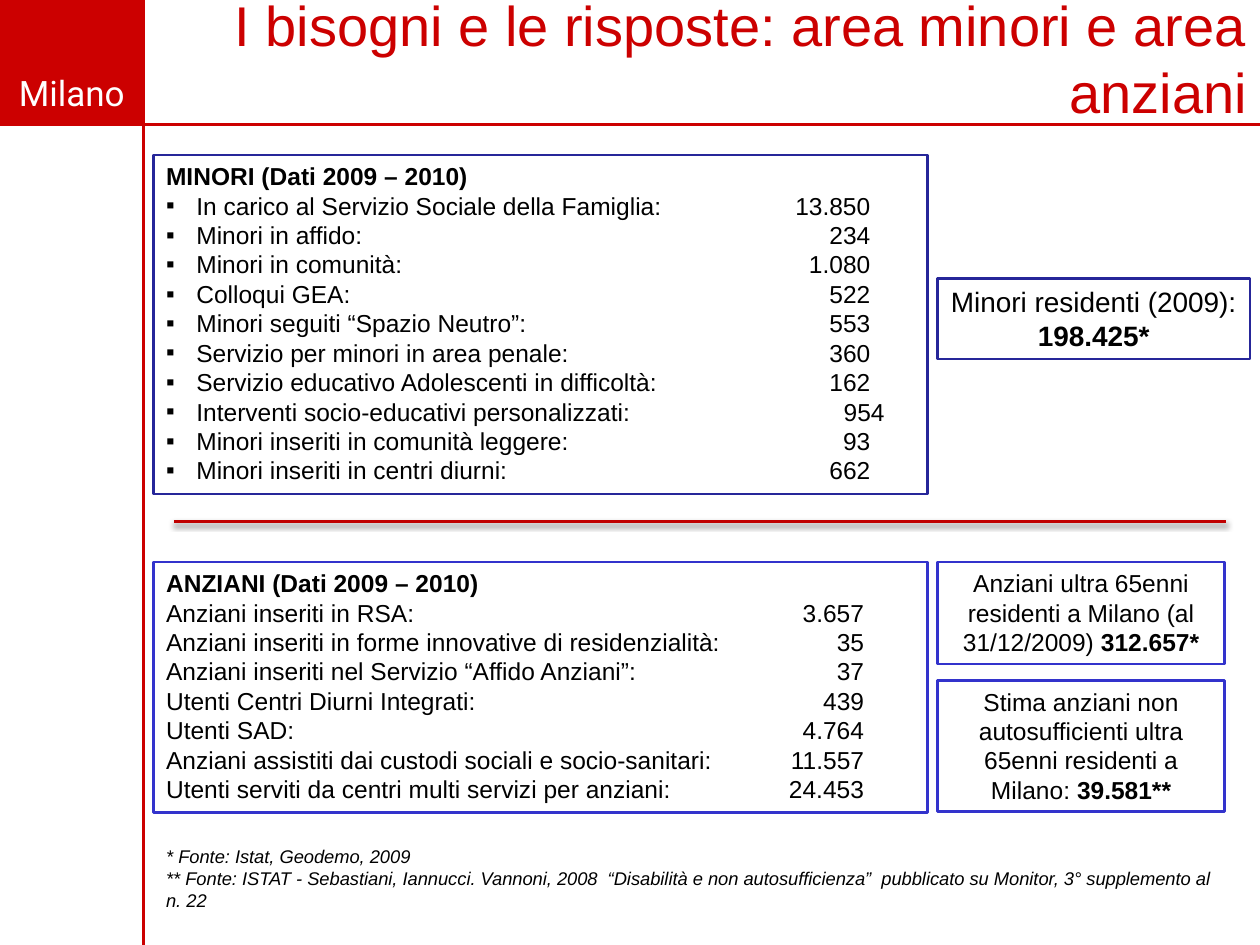
from pptx import Presentation
from pptx.dml.color import RGBColor
from pptx.enum.shapes import MSO_CONNECTOR, MSO_SHAPE
from pptx.enum.text import MSO_ANCHOR, MSO_AUTO_SIZE, PP_ALIGN
from pptx.oxml import parse_xml
from pptx.oxml.ns import nsdecls
from pptx.util import Inches, Pt

RECTANGLE = MSO_SHAPE.RECTANGLE
STRAIGHT = MSO_CONNECTOR.STRAIGHT
TOP, MIDDLE = MSO_ANCHOR.TOP, MSO_ANCHOR.MIDDLE
LEFT, CENTER, RIGHT = PP_ALIGN.LEFT, PP_ALIGN.CENTER, PP_ALIGN.RIGHT
NO_FIT = MSO_AUTO_SIZE.NONE

RED, DARK_RED = "CC0000", "C00000"
NAVY, BLUE = "262699", "3333CC"
BLACK, WHITE = "000000", "FFFFFF"

CHILD_ROWS = [
    ("In carico al Servizio Sociale della Famiglia:", "13.850"),
    ("Minori in affido:", "234"),
    ("Minori in comunità:", "1.080"),
    ("Colloqui GEA:", "522"),
    ("Minori seguiti “Spazio Neutro”:", "553"),
    ("Servizio per minori in area penale:", "360"),
    ("Servizio educativo Adolescenti in difficoltà:", "162"),
    ("Interventi socio-educativi personalizzati:", "954", 5.78),
    ("Minori inseriti in comunità leggere:", "93"),
    ("Minori inseriti in centri diurni:", "662"),
]
ELDERLY_ROWS = [
    ("Anziani inseriti in RSA:", "3.657"),
    ("Anziani inseriti in forme innovative di residenzialità:", "35"),
    ("Anziani inseriti nel Servizio “Affido Anziani”:", "37"),
    ("Utenti Centri Diurni Integrati:", "439"),
    ("Utenti SAD:", "4.764"),
    ("Anziani assistiti dai custodi sociali e socio-sanitari:", "11.557"),
    ("Utenti serviti da centri multi servizi per anziani:", "24.453"),
]
SOURCES = [
    "* Fonte: Istat, Geodemo, 2009",
    "** Fonte: ISTAT - Sebastiani, Iannucci. Vannoni, 2008  “Disabilità e non "
    "autosufficienza”  pubblicato su Monitor, 3° supplemento al n. 22",
]


def color(value):
    return RGBColor.from_string(value)


class SlideBuilder:
    """Hold the slide and its text style, and add each kind of element."""

    def __init__(self, page, font="Arial"):
        self.page = page
        self.font = font

    def span(self, para, text, size, ink=BLACK, bold=False, italic=False, font=None):
        run = para.add_run()
        run.text = text
        run.font.name = font or self.font
        run.font.size = Pt(size)
        run.font.bold = bold
        run.font.italic = italic
        run.font.color.rgb = color(ink)

    def frame(self, shape, anchor=TOP):
        frame = shape.text_frame
        frame.word_wrap = True
        frame.auto_size = NO_FIT
        frame.vertical_anchor = anchor
        return frame

    def title(self, text, place):
        title = self.page.shapes.title
        title.left, title.top, title.width, title.height = map(Inches, place)
        para = self.frame(title, MIDDLE).paragraphs[0]
        para.alignment = RIGHT
        self.span(para, text, 32, RED)

    def text(self, place):
        return self.frame(self.page.shapes.add_textbox(*map(Inches, place)))

    def box(self, place, fill=None, line=None):
        box = self.page.shapes.add_shape(RECTANGLE, *map(Inches, place))
        box.shadow.inherit = False
        if fill:
            box.fill.solid()
            box.fill.fore_color.rgb = color(fill)
        else:
            box.fill.background()
        if line:
            box.line.color.rgb = color(line)
            box.line.width = Pt(1.5)
        else:
            box.line.fill.background()
        return self.frame(box)

    def line(self, ends, ink, width, shadow=""):
        line = self.page.shapes.add_connector(STRAIGHT, *map(Inches, ends))
        line.line.color.rgb = color(ink)
        line.line.width = Pt(width)
        effects = f"<a:effectLst {nsdecls('a')}>{shadow}</a:effectLst>"
        line._element.spPr.append(parse_xml(effects))

    def tab(self, para, position, bullet):
        props = para._p.get_or_add_pPr()
        if bullet:
            indent = Inches(0.24)
            props.set("marL", str(indent))
            props.set("indent", str(-indent))
            props.append(parse_xml(f'<a:buFont {nsdecls("a")} typeface="Arial"/>'))
            props.append(parse_xml(f'<a:buChar {nsdecls("a")} char="▪"/>'))
        props.append(parse_xml(
            f'<a:tabLst {nsdecls("a")}><a:tab pos="{Inches(position)}" algn="r"/></a:tabLst>'))

    def figures(self, place, line, heading, rows, position, bullet=False):
        frame = self.box(place, line=line)
        para = frame.paragraphs[0]
        para.alignment = LEFT
        self.span(para, heading, 14, bold=True)
        for label, value, *shifted in rows:
            para = frame.add_paragraph()
            para.alignment = LEFT
            self.tab(para, shifted[0] if shifted else position, bullet)
            self.span(para, f"{label}\t{value}", 14)

    def total(self, place, line, label, value, size=14):
        para = self.box(place, line=line).paragraphs[0]
        para.alignment = CENTER
        self.span(para, label, size)
        self.span(para, value, size, bold=True)


def main():
    deck = Presentation()
    deck.slide_width, deck.slide_height = Inches(10), Inches(7.5)
    slide = SlideBuilder(deck.slides.add_slide(deck.slide_layouts[5]))

    slide.box((0, 0, 1.14, 0.99), fill=RED)
    slide.line((0, 0.99, 10, 0.99), RED, 1.5)
    slide.line((1.14, 7.5, 1.14, 0), RED, 1.5)
    city = slide.text((0, 0.52, 1.14, 0.43)).paragraphs[0]
    city.alignment = CENTER
    slide.span(city, "Milano", 20, WHITE, font="Roboto")
    slide.title("I bisogni e le risposte: area minori e area anziani", (1.14, 0.05, 8.86, 0.82))

    slide.figures((1.22, 1.23, 6.14, 2.69), NAVY, "MINORI (Dati 2009 – 2010)",
                  CHILD_ROWS, 5.59, bullet=True)
    slide.total((7.44, 2.21, 2.48, 0.64), NAVY, "Minori residenti (2009): ", "198.425*", 16)

    shadow = (f'<a:outerShdw blurRad="{Pt(3.1)}" dist="{Pt(1.6)}" dir="5400000" rotWithShape="0">'
              f'<a:srgbClr val="{BLACK}"><a:alpha val="38000"/></a:srgbClr></a:outerShdw>')
    slide.line((1.38, 4.14, 9.73, 4.14), DARK_RED, 2, shadow)

    slide.figures((1.22, 4.46, 6.14, 1.99), BLUE, "ANZIANI (Dati 2009 – 2010)", ELDERLY_ROWS, 5.54)
    slide.total((7.44, 4.46, 2.28, 0.81), BLUE,
                "Anziani ultra 65enni residenti a Milano (al 31/12/2009) ", "312.657*")
    slide.total((7.44, 5.4, 2.28, 1.04), BLUE,
                "Stima anziani non autosufficienti ultra 65enni residenti a Milano: ", "39.581**")

    notes = slide.text((1.22, 6.66, 8.51, 0.63))
    for index, source in enumerate(SOURCES):
        para = notes.add_paragraph() if index else notes.paragraphs[0]
        slide.span(para, source, 10.5, italic=True)

    deck.save("out.pptx")


if __name__ == "__main__":
    main()
